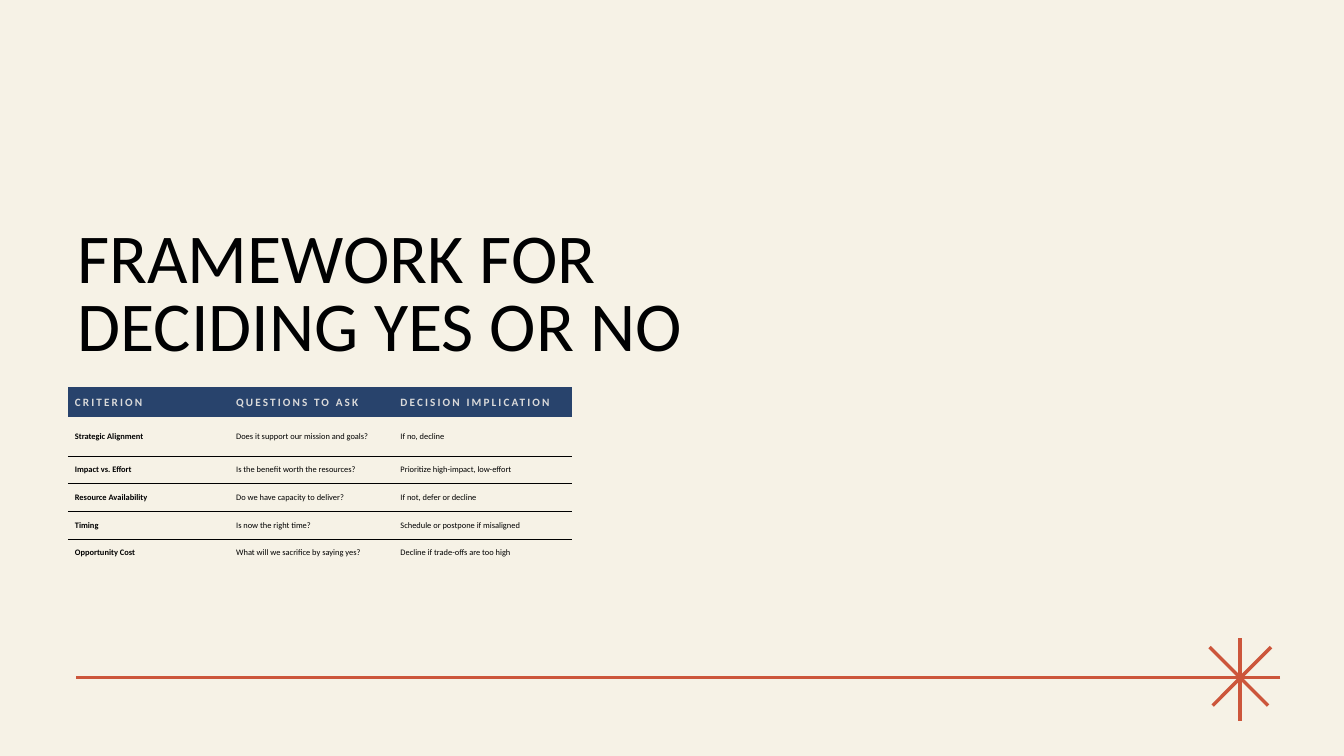
from dataclasses import dataclass

from lxml.etree import SubElement
from pptx import Presentation
from pptx.dml.color import RGBColor as Rgb
from pptx.enum.shapes import MSO_CONNECTOR as Connector
from pptx.enum.text import MSO_ANCHOR as Anchor, MSO_AUTO_SIZE as AutoSize, PP_ALIGN as Align
from pptx.oxml import parse_xml
from pptx.oxml.ns import nsdecls, qn
from pptx.util import Pt


@dataclass(frozen=True)
class Theme:
    """Colours, font and type sizes of the slide."""
    cream: str = "F6F2E6"
    rust: str = "CC563B"
    navy: str = "28436C"
    silver: str = "DADADA"
    ink: str = "000102"
    black: str = "000000"
    font: str = "Calibri"
    title_size: float = 50
    header_size: float = 8
    body_size: float = 6
    header_tracking: int = 150
    flourish_width: float = 2.5
    rule_width: float = 0.5


THEME = Theme()
TITLE = "FRAMEWORK FOR DECIDING YES OR NO"
HEADINGS = ("CRITERION", "QUESTIONS TO ASK", "DECISION IMPLICATION")
CRITERIA = (
    ("Strategic Alignment", "Does it support our mission and goals?", "If no, decline"),
    ("Impact vs. Effort", "Is the benefit worth the resources?", "Prioritize high-impact, low-effort"),
    ("Resource Availability", "Do we have capacity to deliver?", "If not, defer or decline"),
    ("Timing", "Is now the right time?", "Schedule or postpone if misaligned"),
    ("Opportunity Cost", "What will we sacrifice by saying yes?", "Decline if trade-offs are too high"),
)
COLUMN_WIDTHS = (115.2, 117.4, 127.4)
ROW_HEIGHTS = (21.6, 27.8) + (19.7,) * 4


def add_run(paragraph, words, size, colour, bold=False):
    """Append a run of text in the theme font and return it."""
    run = paragraph.add_run()
    run.text = words
    run.font.name = THEME.font
    run.font.size = Pt(size)
    run.font.bold = bold
    run.font.color.rgb = Rgb.from_string(colour)
    return run


def add_flourish(slide, left, top, width, height):
    """Draw the long rule that ends in a star at the right of the box."""
    right = left + width
    centre_x, centre_y = right - 28.8, top + 28
    strokes = (
        (centre_x, top, centre_x, top + height),
        (right, centre_y, left, centre_y),
        (centre_x + 22.3, centre_y - 21.6, centre_x - 19.4, centre_y + 20.2),
        (centre_x + 20.2, centre_y + 20.2, centre_x - 21.6, centre_y - 21.6),
    )
    for stroke in strokes:
        ray = slide.shapes.add_connector(Connector.STRAIGHT, *map(Pt, stroke))
        ray.line.color.rgb = Rgb.from_string(THEME.rust)
        ray.line.width = Pt(THEME.flourish_width)
        SubElement(ray.element.spPr, qn("a:effectLst"))


def place_title(slide, left, top, width, height):
    """Set the slide title in its box, resting on the bottom edge."""
    title = slide.shapes.title
    title.left, title.top, title.width, title.height = map(Pt, (left, top, width, height))
    frame = title.text_frame
    frame.word_wrap = True
    frame.auto_size = AutoSize.NONE
    frame.vertical_anchor = Anchor.BOTTOM
    heading = frame.paragraphs[0]
    heading.alignment = Align.LEFT
    heading.line_spacing = 0.8
    add_run(heading, TITLE, THEME.title_size, THEME.ink)


def set_borders(cell, ruled_edges):
    """Rule the named edges of a cell and clear the others."""
    properties = cell._tc.get_or_add_tcPr()
    for position, edge in enumerate("LRTB"):
        paint = "<a:noFill/>"
        if edge in ruled_edges:
            paint = f'<a:solidFill><a:srgbClr val="{THEME.black}"/></a:solidFill>'
        border = parse_xml(f'<a:ln{edge} {nsdecls("a")} w="{Pt(THEME.rule_width)}">{paint}</a:ln{edge}>')
        properties.insert(position, border)


def fill_cell(cell, words, row, column):
    """Write and style one cell according to its row and column."""
    cell.vertical_anchor = Anchor.MIDDLE
    cell.margin_left = cell.margin_right = cell.margin_top = cell.margin_bottom = Pt(5)
    paragraph = cell.text_frame.paragraphs[0]
    if row == 0:
        cell.fill.solid()
        cell.fill.fore_color.rgb = Rgb.from_string(THEME.navy)
        heading = add_run(paragraph, words, THEME.header_size, THEME.silver, bold=True)
        heading.font._element.set("spc", str(THEME.header_tracking))
    else:
        cell.fill.background()
        add_run(paragraph, words, THEME.body_size, THEME.black, bold=column == 0)
    top_edge = "T" if row > 1 else ""
    bottom_edge = "B" if 0 < row < len(CRITERIA) else ""
    set_borders(cell, top_edge + bottom_edge)


def add_criteria_table(slide, left, top):
    """Build the table of decision criteria from its top left corner."""
    records = (HEADINGS,) + CRITERIA
    box = map(Pt, (left, top, sum(COLUMN_WIDTHS), sum(ROW_HEIGHTS)))
    criteria = slide.shapes.add_table(len(records), len(HEADINGS), *box).table
    criteria.horz_banding = False
    for column, width in zip(criteria.columns, COLUMN_WIDTHS):
        column.width = Pt(width)
    for row, height in zip(criteria.rows, ROW_HEIGHTS):
        row.height = Pt(height)
    for row, record in enumerate(records):
        for column, words in enumerate(record):
            fill_cell(criteria.cell(row, column), words, row, column)


def build_framework_slide(deck):
    """Add the decision framework slide to the deck."""
    slide = deck.slides.add_slide(deck.slide_layouts[5])
    slide.background.fill.solid()
    slide.background.fill.fore_color.rgb = Rgb.from_string(THEME.cream)
    add_flourish(slide, 54, 455.8, 860.4, 59)
    place_title(slide, 48, 144, 504, 120)
    add_criteria_table(slide, 48.5, 276.5)


def main():
    """Create the deck and save it."""
    deck = Presentation()
    deck.slide_width, deck.slide_height = Pt(960), Pt(540)
    build_framework_slide(deck)
    deck.save("out.pptx")


if __name__ == "__main__":
    main()
